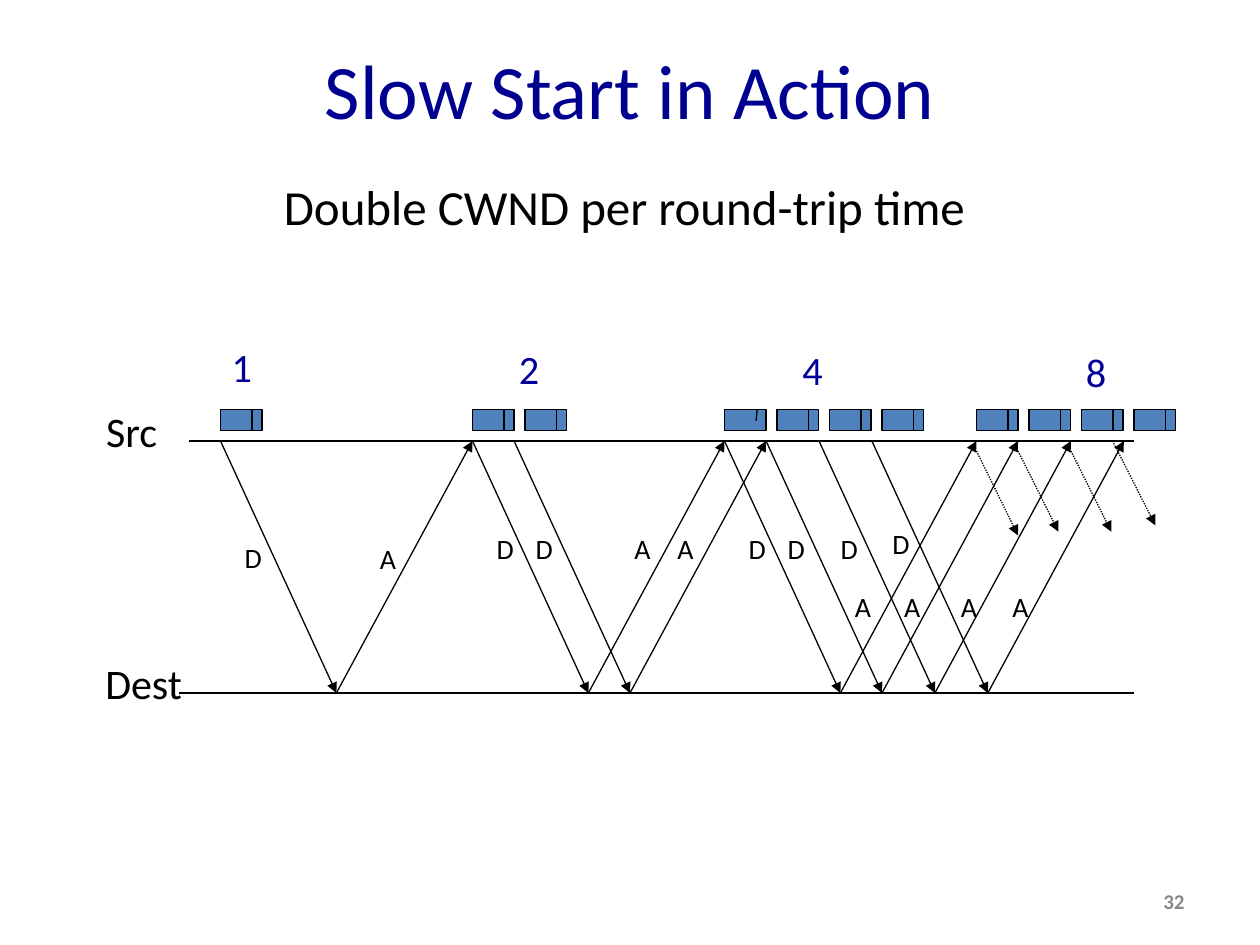
from pptx import Presentation
from pptx.util import Inches, Pt
from pptx.dml.color import RGBColor as Rgb
from pptx.enum.dml import MSO_LINE as Dash
from pptx.enum.shapes import MSO_SHAPE as Shape, MSO_CONNECTOR as Link
from pptx.enum.text import PP_ALIGN as Align, MSO_ANCHOR as Anchor
from pptx.oxml.ns import qn
from lxml.etree import SubElement as Sub

HUES = {"title": "000090", "count": "000099", "ink": "000000",
        "page": "898989", "fill": "4F81BD"}
STEP, DOWN, SPAN = 2, 0.92, 2
STARTS = [[0], [0, 0.33], [0, 0.33, 0.75, 1.17]]
COUNTS = [("1", 0.17, -0.83), ("2", 2.45, -0.82),
          ("4", 4.7, -0.81), ("8", 6.95, -0.79)]
MARKS = [("D", 0.26, 0.74), ("A", 1.33, 0.75), ("D", 2.26, 0.67),
         ("D", 2.57, 0.67), ("A", 3.35, 0.67), ("A", 3.69, 0.67),
         ("D", 4.26, 0.67), ("D", 4.57, 0.67), ("D", 4.99, 0.67),
         ("D", 5.4, 0.63), ("A", 5.1, 1.13), ("A", 5.49, 1.13),
         ("A", 5.94, 1.13), ("A", 6.35, 1.13)]
DOTS = [(6, 0.08, 6.33, 0.75), (6.33, 0.08, 6.65, 0.72),
        (6.75, 0.08, 7.07, 0.72), (7.08, 0, 7.42, 0.67)]


def write(slide, text, x, y, w, h, size=16, hue="ink", bold=False,
          align=Align.CENTER, anchor=Anchor.TOP, wrap=False):
    """Place a line of text in a box."""
    box = slide.shapes.add_textbox(Inches(x), Inches(y), Inches(w), Inches(h))
    frame = box.text_frame
    frame.word_wrap = wrap
    frame.vertical_anchor = anchor
    para = frame.paragraphs[0]
    para.alignment = align
    run = para.add_run()
    run.text = text
    font = run.font
    font.name, font.size, font.bold = "Calibri", Pt(size), bold
    font.color.rgb = Rgb.from_string(HUES[hue])


def rule(slide, x, y, to_x, to_y, tip=False, dots=False):
    """Draw a thin line, with an arrowhead or dots if asked."""
    link = slide.shapes.add_connector(
        Link.STRAIGHT, Inches(x), Inches(y), Inches(to_x), Inches(to_y))
    line = link.line
    line.width = Pt(0.75)
    line.color.rgb = Rgb.from_string(HUES["ink"])
    if dots:
        line.dash_style = Dash.ROUND_DOT
    props = link._element.spPr
    if tip:
        Sub(props.find(qn("a:ln")), qn("a:tailEnd"), type="triangle")
    Sub(props, qn("a:effectLst"))


def packet(slide, x, y, w, h, slant=False):
    """Draw a packet with its header line."""
    box = slide.shapes.add_shape(
        Shape.RECTANGLE, Inches(x), Inches(y), Inches(w), Inches(h))
    box.shadow.inherit = False
    box.fill.solid()
    box.fill.fore_color.rgb = Rgb.from_string(HUES["fill"])
    box.line.color.rgb = Rgb.from_string(HUES["ink"])
    box.line.width = Pt(0.75)
    mid = x + 0.25
    if slant:
        rule(slide, mid + 0.01, y, mid, y + 0.09)
    else:
        rule(slide, mid, y, mid, y + h)


def heads(slide, x, y, w):
    """Write the title and the line below it."""
    write(slide, "Slow Start in Action", x, y, w, 1.25, size=44,
          hue="title", anchor=Anchor.MIDDLE, wrap=True)
    write(slide, "Double CWND per round-trip time", x + 1.62, y + 1.27,
          5.67, 0.57, size=28)


def axes(slide, x, y, w, h):
    """Draw the source and destination lines with their names."""
    rule(slide, x, y, x + w, y)
    rule(slide, x - 0.08, y + h, x + w, y + h)
    write(slide, "Src", x - 0.76, y - 0.33, 0.61, 0.5, size=24)
    write(slide, "Dest", x - 0.77, y + h - 0.33, 0.82, 0.5, size=24)


def flow(slide, x, y, h):
    """Draw the data and reply arrows of each round."""
    for turn, row in enumerate(STARTS):
        for start in row:
            left = x + turn * STEP + start
            rule(slide, left, y, left + DOWN, y + h, tip=True)
            rule(slide, left + DOWN, y + h, left + SPAN, y, tip=True)
    for ax, ay, bx, by in DOTS:
        rule(slide, x + ax, y + ay, x + bx, y + by, tip=True, dots=True)


def queue(slide, x, y):
    """Draw the packets sent in each round."""
    for turn, count in enumerate([1, 2, 4, 4]):
        for item in range(count):
            packet(slide, x + turn * STEP + item * 5 / 12, y, 0.33, 0.17,
                   slant=(turn, item) == (2, 0))


def marks(slide, x, y):
    """Write the arrow letters and the window sizes."""
    for text, dx, dy in MARKS:
        write(slide, text, x + dx - 0.17, y + dy, 0.34, 0.37)
    for text, dx, dy in COUNTS:
        write(slide, text, x + dx - 0.18, y + dy, 0.36, 0.49,
              size=23, hue="count")


def main():
    """Build and save the slide."""
    deck = Presentation()
    deck.slide_width, deck.slide_height = Inches(10), Inches(7.5)
    slide = deck.slides.add_slide(deck.slide_layouts[6])
    heads(slide, 0.5, 0.08, 9)
    axes(slide, 1.5, 3.5, 7.5, 2)
    flow(slide, 1.75, 3.5, 2)
    queue(slide, 1.75, 3.25)
    marks(slide, 1.75, 3.5)
    write(slide, "32", 7.17, 6.95, 2.33, 0.4, size=12, hue="page", bold=True,
          align=Align.RIGHT, anchor=Anchor.MIDDLE, wrap=True)
    deck.save("out.pptx")


if __name__ == "__main__":
    main()
